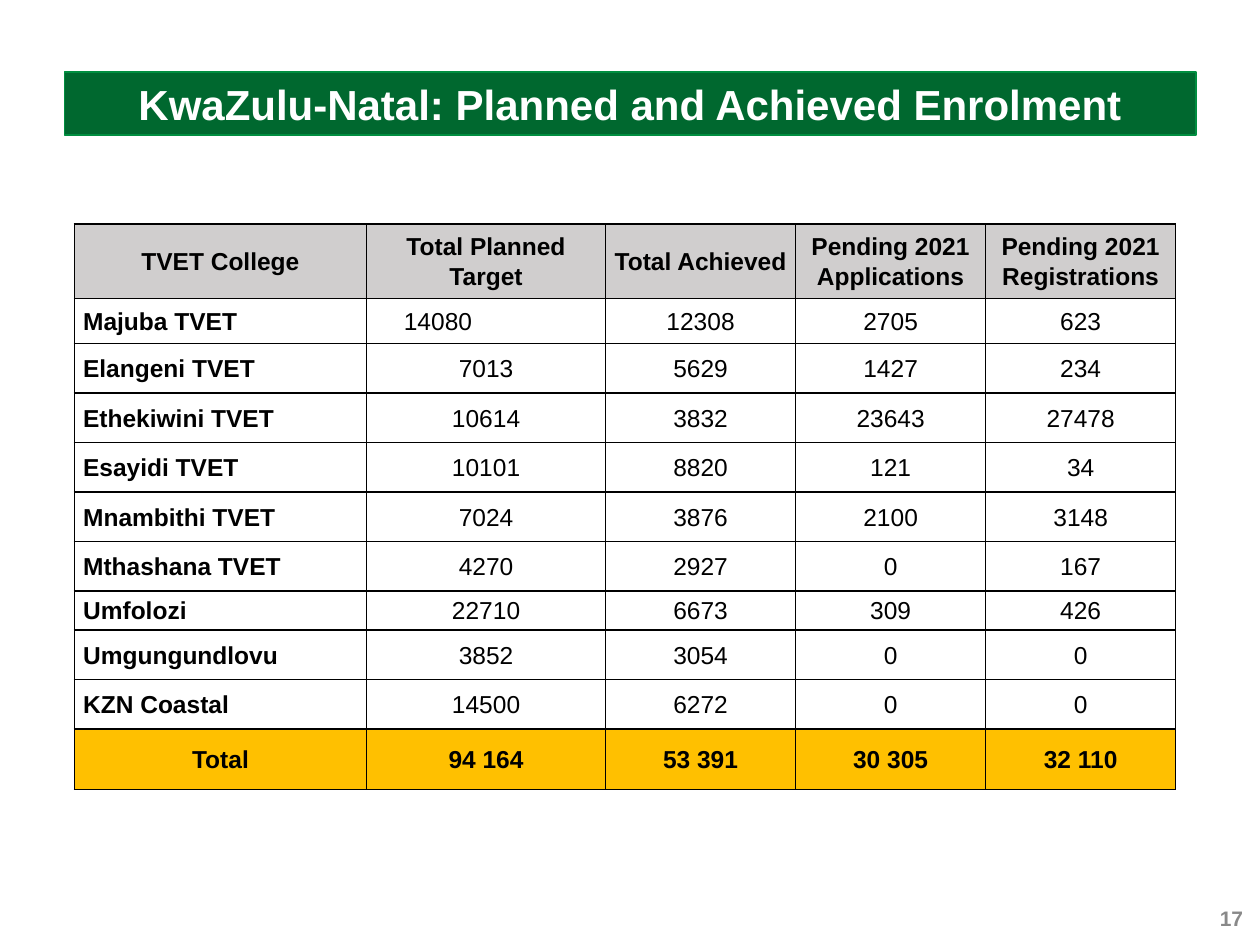
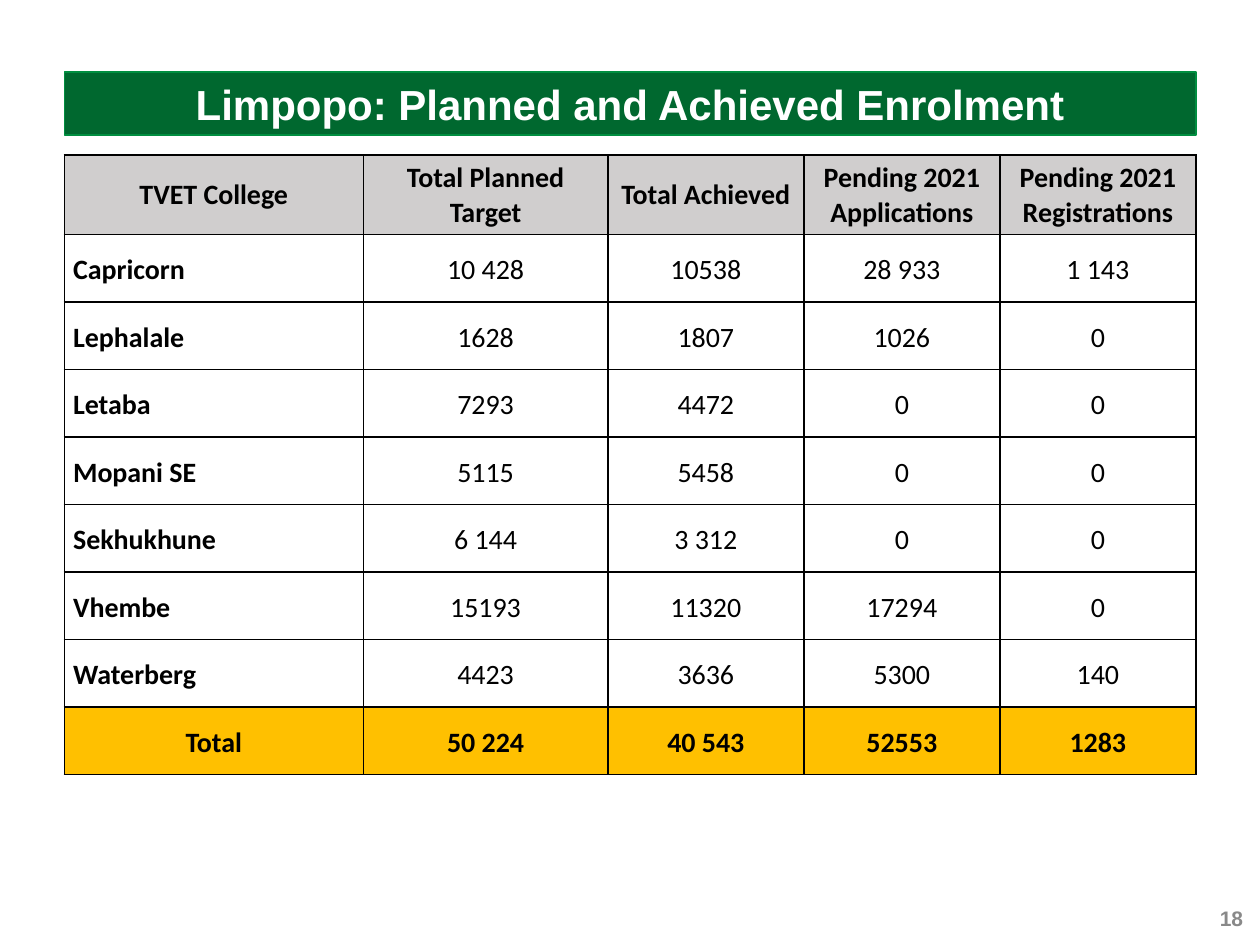
from dataclasses import dataclass, field

from lxml import etree
from pptx import Presentation
from pptx.dml.color import RGBColor
from pptx.enum.shapes import MSO_SHAPE
from pptx.enum.text import MSO_ANCHOR, PP_ALIGN
from pptx.oxml.ns import qn
from pptx.slide import Slide
from pptx.table import _Cell
from pptx.text.text import _Paragraph
from pptx.util import Pt

RECTANGLE = MSO_SHAPE.RECTANGLE
MIDDLE = MSO_ANCHOR.MIDDLE
LEFT, CENTER, RIGHT = PP_ALIGN.LEFT, PP_ALIGN.CENTER, PP_ALIGN.RIGHT
BLANK_LAYOUT = 6


@dataclass(frozen=True)
class Theme:
    font: str = "Arial"
    title_size: float = 24
    number_size: float = 12
    band: str = "00682F"
    band_line: str = "008E40"
    white: str = "FFFFFF"
    black: str = "000000"
    grey: str = "898989"
    header_fill: str = "D0CECE"
    total_fill: str = "FFC000"
    line_width: float = 1
    cell_margin: float = 5
    space_after: float = 8


THEME = Theme()
HEADERS = ("TVET College", "Total Planned Target", "Total Achieved",
           "Pending 2021 Applications", "Pending 2021 Registrations")


@dataclass(frozen=True)
class EnrolmentTable:
    """Lengths are in points; row_heights and right_margins hold exceptions."""
    left: float
    top: float
    column_widths: tuple[float, ...]
    row_height: float
    row_heights: dict[int, float]
    font: str
    size: float
    header_spacing: float
    body_spacing: float
    margin_top: float
    colleges: tuple[tuple[str, ...], ...]
    total: tuple[str, ...]
    right_margins: dict[tuple[int, int], float] = field(default_factory=dict)


@dataclass(frozen=True)
class Province:
    name: str
    page_number: int
    table: EnrolmentTable


PROVINCES = (
    Province("KwaZulu-Natal", 17, EnrolmentTable(
        left=42.5, top=128, column_widths=(167, 136.6, 108.6, 108.6, 108.6),
        row_height=28.3, row_heights={0: 42.5, 1: 25.7, 7: 22.5, 10: 34.4},
        font="Arial", size=14, header_spacing=1.07, body_spacing=1.07, margin_top=0,
        colleges=(
            ("Majuba TVET", "14080", "12308", "2705", "623"),
            ("Elangeni TVET", "7013", "5629", "1427", "234"),
            ("Ethekiwini TVET", "10614", "3832", "23643", "27478"),
            ("Esayidi TVET", "10101", "8820", "121", "34"),
            ("Mnambithi TVET", "7024", "3876", "2100", "3148"),
            ("Mthashana TVET", "4270", "2927", "0", "167"),
            ("Umfolozi", "22710", "6673", "309", "426"),
            ("Umgungundlovu", "3852", "3054", "0", "0"),
            ("KZN Coastal", "14500", "6272", "0", "0"),
        ),
        total=("Total", "94 164", "53 391", "30 305", "32 110"),
        right_margins={(1, 1): 60})),
    Province("Limpopo", 18, EnrolmentTable(
        left=36.8, top=88.5, column_widths=(170.8, 139.8, 112, 112, 112),
        row_height=38.6, row_heights={0: 45.6},
        font="Calibri", size=16, header_spacing=1, body_spacing=1.06, margin_top=0.7,
        colleges=(
            ("Capricorn", "10 428", "10538", "28 933", "1 143"),
            ("Lephalale", "1628", "1807", "1026", "0"),
            ("Letaba", "7293", "4472", "0", "0"),
            ("Mopani SE", "5115", "5458", "0", "0"),
            ("Sekhukhune", "6 144", "3 312", "0", "0"),
            ("Vhembe", "15193", "11320", "17294", "0"),
            ("Waterberg", "4423", "3636", "5300", "140"),
        ),
        total=("Total", "50 224", "40 543", "52553", "1283"))),
)


def color(code: str) -> RGBColor:
    return RGBColor.from_string(code)


def write(para: _Paragraph, text: str, align: PP_ALIGN, size: float, code: str,
          font: str = THEME.font, bold: bool = True) -> None:
    para.text = text
    para.alignment = align
    for span in para.runs:
        span.font.name = font
        span.font.size = Pt(size)
        span.font.bold = bold
        span.font.color.rgb = color(code)


def add_page_number(page: Slide, number: int) -> None:
    box = page.shapes.add_textbox(Pt(549.4), Pt(514), Pt(168), Pt(28.8))
    box.text_frame.word_wrap = True
    write(box.text_frame.paragraphs[0], str(number), RIGHT, THEME.number_size, THEME.grey)


def add_title_band(page: Slide, title: str) -> None:
    band = page.shapes.add_shape(RECTANGLE, Pt(36.8), Pt(41), Pt(646.5), Pt(36.4))
    band.shadow.inherit = False
    band.fill.solid()
    band.fill.fore_color.rgb = color(THEME.band)
    band.line.color.rgb = color(THEME.band_line)
    band.line.width = Pt(THEME.line_width)
    band.text_frame.word_wrap = True
    band.text_frame.vertical_anchor = MIDDLE
    write(band.text_frame.paragraphs[0], title, CENTER, THEME.title_size, THEME.white)


def add_borders(cell: _Cell) -> None:
    properties = cell._tc.get_or_add_tcPr()
    for side in ("a:lnL", "a:lnR", "a:lnT", "a:lnB"):
        line = etree.SubElement(properties, qn(side), w=str(Pt(THEME.line_width)))
        fill = etree.SubElement(line, qn("a:solidFill"))
        etree.SubElement(fill, qn("a:srgbClr"), val=THEME.black)


def add_enrolment_table(page: Slide, spec: EnrolmentTable) -> None:
    rows = (HEADERS, *spec.colleges, spec.total)
    last = len(rows) - 1
    heights = [spec.row_heights.get(index, spec.row_height) for index in range(len(rows))]
    table = page.shapes.add_table(
        len(rows), len(HEADERS), Pt(spec.left), Pt(spec.top),
        Pt(sum(spec.column_widths)), Pt(sum(heights))).table
    table.first_row = table.horz_banding = False
    for column, width in zip(table.columns, spec.column_widths):
        column.width = Pt(width)

    for row_index, values in enumerate(rows):
        table.rows[row_index].height = Pt(heights[row_index])
        emphasized = row_index in (0, last)
        for column_index, value in enumerate(values):
            cell = table.cell(row_index, column_index)
            cell.vertical_anchor = MIDDLE
            cell.margin_left = Pt(THEME.cell_margin)
            cell.margin_right = Pt(
                spec.right_margins.get((row_index, column_index), THEME.cell_margin))
            cell.margin_top = Pt(spec.margin_top)
            cell.margin_bottom = Pt(0)
            add_borders(cell)
            if emphasized:
                cell.fill.solid()
                cell.fill.fore_color.rgb = color(
                    THEME.total_fill if row_index else THEME.header_fill)
            else:
                cell.fill.background()
            is_name = column_index == 0
            para = cell.text_frame.paragraphs[0]
            para.line_spacing = spec.body_spacing if row_index else spec.header_spacing
            para.space_after = Pt(THEME.space_after)
            write(para, value, LEFT if is_name and not emphasized else CENTER,
                  spec.size, THEME.black, spec.font, bold=emphasized or is_name)


def main() -> None:
    deck = Presentation()
    deck.slide_width, deck.slide_height = Pt(720), Pt(540)
    for province in PROVINCES:
        page = deck.slides.add_slide(deck.slide_layouts[BLANK_LAYOUT])
        add_page_number(page, province.page_number)
        add_title_band(page, f"{province.name}: Planned and Achieved Enrolment")
        add_enrolment_table(page, province.table)
    deck.save("out.pptx")


if __name__ == "__main__":
    main()
